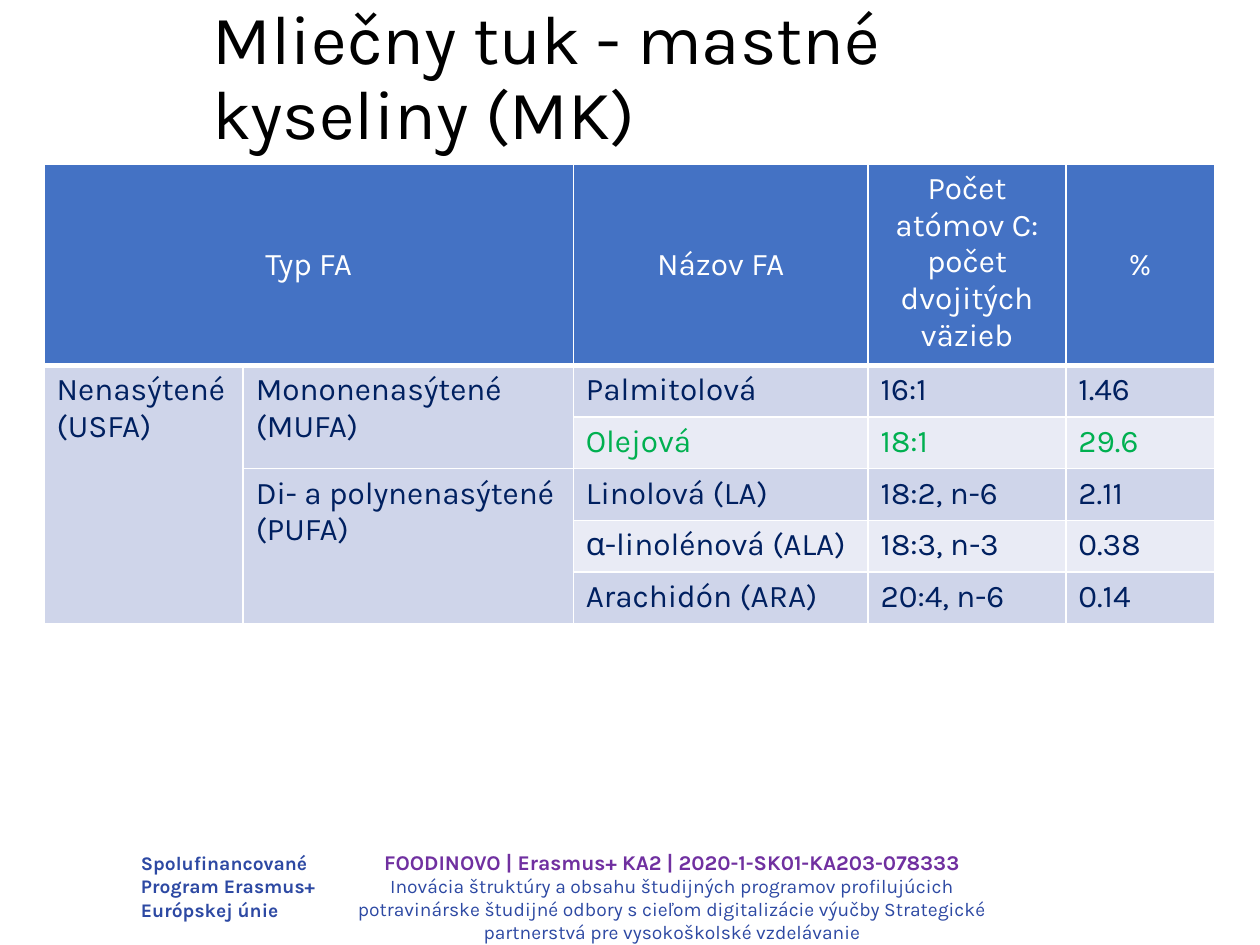
from lxml.etree import SubElement
from pptx import Presentation
from pptx.dml.color import RGBColor
from pptx.enum.text import MSO_ANCHOR, PP_ALIGN
from pptx.oxml.ns import qn
from pptx.util import Inches, Pt

NAVY, GREEN, WHITE, BLUE = "002060", "00B050", "FFFFFF", "2D49A3"
HEADER_FILL, BAND_FILLS = "4472C4", ("CFD5EA", "E9EBF5")
COLUMN_WIDTHS = (1.58, 2.62, 2.34, 1.57, 1.18)
ROW_HEIGHTS = (1.56,) + (0.41,) * 5
ROWS = (
    ("Typ FA", "", "Názov FA", "Počet atómov C: počet dvojitých väzieb", "%"),
    ("Nenasýtené (USFA)", "Mononenasýtené (MUFA)", "Palmitolová", "16:1", "1.46"),
    ("", "", "Olejová", "18:1", "29.6"),
    ("", "Di- a polynenasýtené (PUFA)", "Linolová (LA)", "18:2, n-6", "2.11"),
    ("", "", "α-linolénová (ALA)", "18:3, n-3", "0.38"),
    ("", "", "Arachidón (ARA)", "20:4, n-6", "0.14"),
)
MERGES = (((0, 0), (0, 1)), ((1, 0), (5, 0)), ((1, 1), (2, 1)), ((3, 1), (5, 1)))
HIGHLIGHTED_ROW = 2


def color(value):
    """Turn a hex string into a colour."""
    return RGBColor.from_string(value)


def write(paragraph, text, size=18, fill=NAVY, bold=False, align=PP_ALIGN.LEFT, spacing=None):
    """Fill a paragraph with formatted text."""
    paragraph.text = text
    paragraph.alignment = align
    paragraph.line_spacing = spacing
    font = paragraph.font
    font.name, font.size, font.bold = SlideBuilder.font_name, Pt(size), bold
    font.color.rgb = color(fill)
    for run in paragraph.runs:
        run.font.name, run.font.size, run.font.bold = font.name, font.size, bold
        run.font.color.rgb = color(fill)


def set_borders(cell, widths):
    """Draw white borders around a cell, in the order left, right, top, bottom."""
    properties = cell._tc.get_or_add_tcPr()
    for index, (side, width) in enumerate(zip(("lnL", "lnR", "lnT", "lnB"), widths)):
        line = SubElement(properties, qn(f"a:{side}"), w=str(Pt(width)))
        solid = SubElement(line, qn("a:solidFill"))
        SubElement(solid, qn("a:srgbClr"), val=WHITE)
        properties.remove(line)
        properties.insert(index, line)


class SlideBuilder:
    """Hold the style and the current slide."""

    font_name = "Karla"

    def __init__(self, presentation):
        """Add a blank slide."""
        self.slide = presentation.slides.add_slide(presentation.slide_layouts[6])

    def text_box(self, left, top, width, height, paragraphs, anchor=MSO_ANCHOR.TOP):
        """Add a wrapping text box with one format per paragraph."""
        box = self.slide.shapes.add_textbox(*map(Inches, (left, top, width, height)))
        frame = box.text_frame
        frame.word_wrap = True
        frame.vertical_anchor = anchor
        for index, (text, style) in enumerate(paragraphs):
            paragraph = frame.add_paragraph() if index else frame.paragraphs[0]
            write(paragraph, text, **style)

    def table(self, left, top, rows):
        """Add the fatty acid table."""
        size = sum(COLUMN_WIDTHS), sum(ROW_HEIGHTS)
        frame = self.slide.shapes.add_table(
            len(rows), len(COLUMN_WIDTHS), *map(Inches, (left, top, *size)))
        table = frame.table
        for column, width in zip(table.columns, COLUMN_WIDTHS):
            column.width = Inches(width)
        for row, height in zip(table.rows, ROW_HEIGHTS):
            row.height = Inches(height)
        for start, end in MERGES:
            table.cell(*start).merge(table.cell(*end))
        for row_index, values in enumerate(rows):
            for column_index, text in enumerate(values):
                self.cell(table.cell(row_index, column_index), text, row_index, column_index)

    def cell(self, cell, text, row, column):
        """Format one table cell by its row and column."""
        header = row == 0
        band = 0 if column < 2 else (row - 1) % 2
        cell.fill.solid()
        cell.fill.fore_color.rgb = color(HEADER_FILL if header else BAND_FILLS[band])
        set_borders(cell, (1, 1, 3 if row == 1 else 1, 3 if header else 1))
        if header and column != 3:
            cell.vertical_anchor = MSO_ANCHOR.MIDDLE
        if text:
            text_color = WHITE if header else GREEN if row == HIGHLIGHTED_ROW else NAVY
            write(cell.text_frame.paragraphs[0], text, fill=text_color,
                  align=PP_ALIGN.CENTER if header else PP_ALIGN.LEFT)


def main():
    """Build and save the slide."""
    presentation = Presentation()
    presentation.slide_width, presentation.slide_height = Inches(10), Inches(7.5)
    builder = SlideBuilder(presentation)
    builder.text_box(2.58, 6.69, 5.51, 0.67, (
        ("FOODINOVO | Erasmus+ KA2 | 2020-1-SK01-KA203-078333",
         dict(size=12, fill="7030A0", bold=True, align=PP_ALIGN.CENTER)),
        ("Inovácia štruktúry a obsahu študijných programov profilujúcich "
         "potravinárske študijné odbory s cieľom digitalizácie výučby "
         "Strategické partnerstvá pre vysokoškolské vzdelávanie",
         dict(size=11, fill=BLUE, align=PP_ALIGN.CENTER)),
    ))
    funding_style = dict(size=11, fill=BLUE, bold=True)
    funding_lines = ("Spolufinancované", "Program Erasmus+", "Európskej únie")
    builder.text_box(1.02, 6.71, 2.04, 0.66, [(line, funding_style) for line in funding_lines])
    builder.text_box(1.59, 0.38, 7.46, 1.16, (
        ("Mliečny tuk - mastné kyseliny (MK)\v", dict(size=39.6, fill="000000", spacing=0.9)),
    ), MSO_ANCHOR.MIDDLE)
    builder.table(0.35, 1.3, ROWS)
    presentation.save("out.pptx")


if __name__ == "__main__":
    main()
